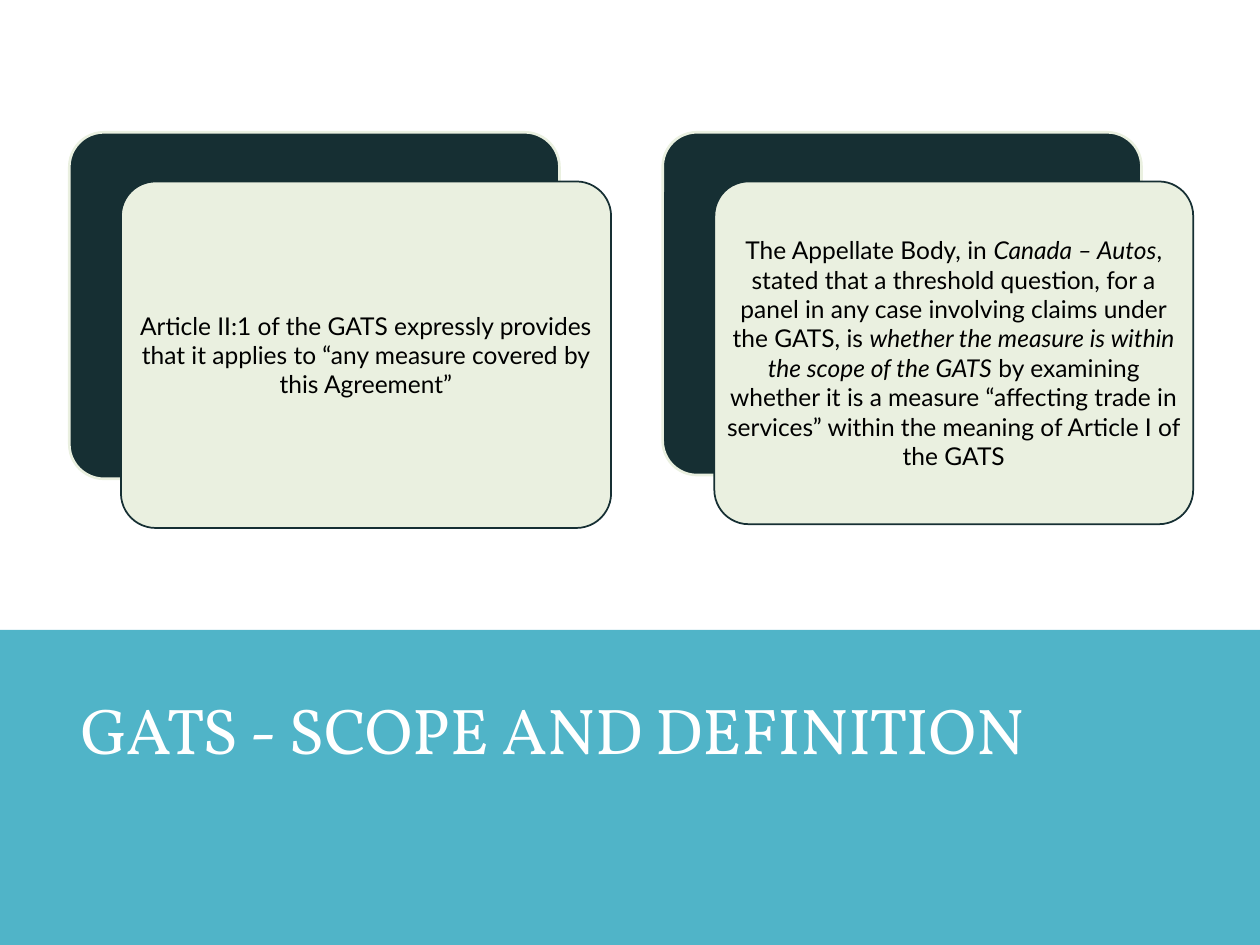
from dataclasses import dataclass

from pptx import Presentation
from pptx.dml.color import RGBColor
from pptx.enum.shapes import MSO_SHAPE
from pptx.enum.text import MSO_ANCHOR, MSO_AUTO_SIZE, PP_ALIGN
from pptx.util import Inches, Pt

RECTANGLE = MSO_SHAPE.RECTANGLE
ROUNDED = MSO_SHAPE.ROUNDED_RECTANGLE
MIDDLE = MSO_ANCHOR.MIDDLE
NO_AUTOFIT = MSO_AUTO_SIZE.NONE
LEFT, CENTER = PP_ALIGN.LEFT, PP_ALIGN.CENTER
TITLE_ONLY = 5


@dataclass(frozen=True)
class Theme:
    """Colours, fonts and type sizes of the slide."""
    band: RGBColor = RGBColor.from_string("50B4C8")
    dark: RGBColor = RGBColor.from_string("162F33")
    pale: RGBColor = RGBColor.from_string("EAF0E0")
    title_color: RGBColor = RGBColor.from_string("FFFFFF")
    body_color: RGBColor = RGBColor.from_string("000000")
    title_font: str = "Vollkorn"
    body_font: str = "Lato"
    title_size: Pt = Pt(37)
    body_size: Pt = Pt(14)


THEME = Theme()
CARD_TOP = 1.05
OFFSET_X, OFFSET_Y = 0.41, 0.39
CARDS = [
    (0.55, 3.89, 2.75, [
        ("Article II:1 of the GATS expressly provides that it applies to "
         "“any measure covered by this Agreement”", False),
    ]),
    (5.26, 3.8, 2.72, [
        ("The Appellate Body, in ", False),
        ("Canada – Autos", True),
        (", stated that a threshold question, for a panel in any case "
         "involving claims under the GATS, is ", False),
        ("whether the measure is within the scope of the GATS", True),
        (" by examining whether it is a measure “affecting trade in services” "
         "within the meaning of Article I of the GATS", False),
    ]),
]


def apply_format(target, values):
    """Set each named attribute on the target."""
    for name, value in values.items():
        setattr(target, name, value)


def style_font(font, name, size, color, italic=False):
    """Give a font its face, size, colour and slant."""
    apply_format(font, {"name": name, "size": size, "bold": False, "italic": italic})
    font.color.rgb = color


def add_panel(slide, kind, box, fill, line=None, line_width=0):
    """Add a flat filled shape with an optional outline."""
    panel = slide.shapes.add_shape(kind, *map(Inches, box))
    panel.shadow.inherit = False
    panel.fill.solid()
    panel.fill.fore_color.rgb = fill
    if line is None:
        panel.line.fill.background()
    else:
        panel.line.color.rgb = line
        panel.line.width = Pt(line_width)
    if kind == ROUNDED:
        panel.adjustments[0] = 0.1
    return panel


def add_band(slide):
    """Add the coloured band behind the title."""
    band = add_panel(slide, RECTANGLE, (0, 5, 10, 2.5), THEME.band)
    slide.shapes.title.element.addprevious(band.element)


def set_title(slide, wording):
    """Place and format the slide title."""
    title = slide.shapes.title
    apply_format(title, {"left": Inches(0.54), "top": Inches(5.22),
                         "width": Inches(8.84), "height": Inches(1.81)})
    frame = title.text_frame
    frame.text = wording
    apply_format(frame, {"vertical_anchor": MIDDLE, "word_wrap": True,
                         "auto_size": NO_AUTOFIT, "margin_bottom": Inches(0.66)})
    heading = frame.paragraphs[0]
    apply_format(heading, {"alignment": LEFT, "line_spacing": 0.9})
    style_font(heading.runs[0].font, THEME.title_font, THEME.title_size, THEME.title_color)


def add_card(slide, left, width, height, passages):
    """Add a pale text card in front of an offset dark card."""
    add_panel(slide, ROUNDED, (left, CARD_TOP, width, height), THEME.dark, THEME.pale, 1.5)
    front_box = (left + OFFSET_X, CARD_TOP + OFFSET_Y, width, height)
    front = add_panel(slide, ROUNDED, front_box, THEME.pale, THEME.dark, 1)
    frame = front.text_frame
    apply_format(frame, {"vertical_anchor": MIDDLE, "word_wrap": True,
                         "margin_left": 0, "margin_right": 0,
                         "margin_top": 0, "margin_bottom": 0})
    statement = frame.paragraphs[0]
    statement.alignment = CENTER
    for wording, italic in passages:
        passage = statement.add_run()
        passage.text = wording
        style_font(passage.font, THEME.body_font, THEME.body_size, THEME.body_color, italic)


def main():
    """Build and save the slide."""
    deck = Presentation()
    apply_format(deck, {"slide_width": Inches(10), "slide_height": Inches(7.5)})
    slide = deck.slides.add_slide(deck.slide_layouts[TITLE_ONLY])
    add_band(slide)
    set_title(slide, "GATS - SCOPE AND DEFINITION")
    for card in CARDS:
        add_card(slide, *card)
    deck.save("out.pptx")


if __name__ == "__main__":
    main()
